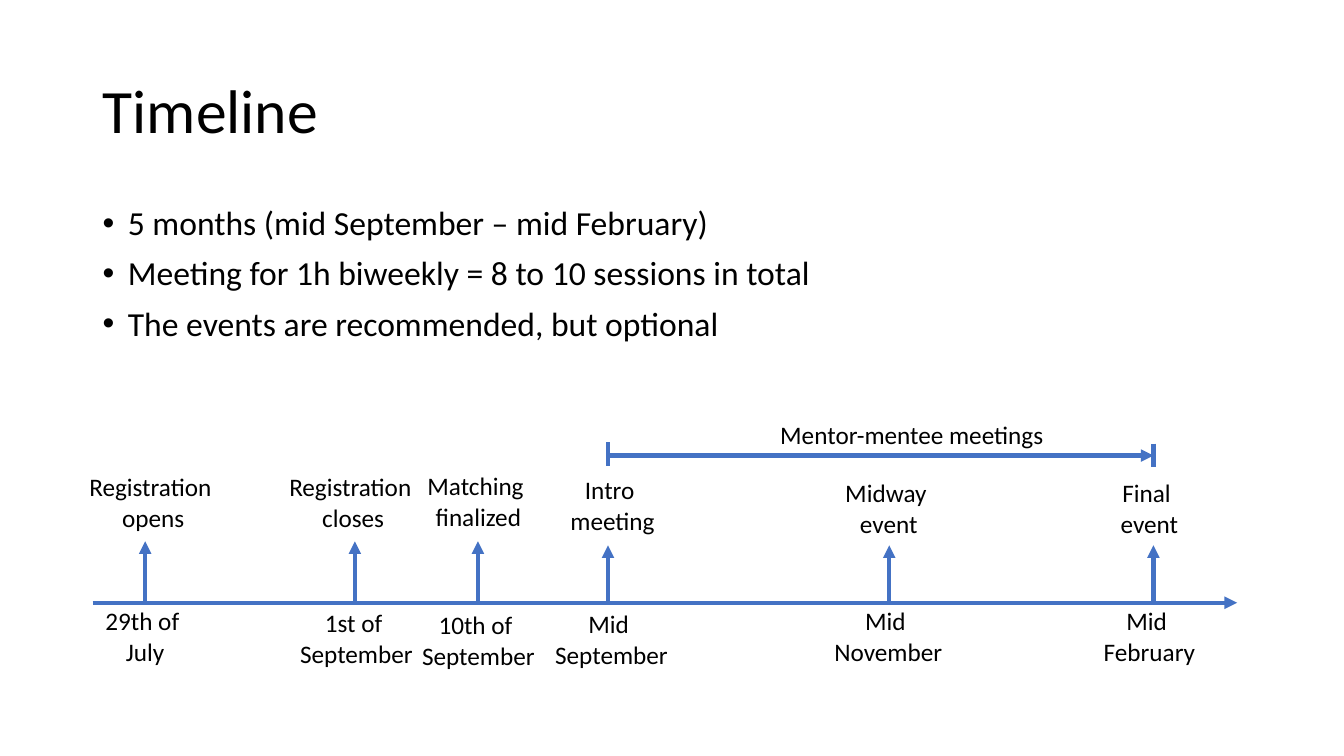
from dataclasses import dataclass

import pptx
import pptx.dml.color
import pptx.enum.shapes
import pptx.enum.text
import pptx.oxml.ns
import pptx.util
from lxml import etree

PX = 9144


@dataclass(frozen=True)
class Theme:
    font: str = "Calibri"
    ink: str = "000000"
    accent: str = "4472C4"
    title: int = 44
    body: int = 24
    label: int = 18
    stroke: int = 3


THEME = Theme()
ALIGN = pptx.enum.text.PP_ALIGN
ANCHOR = pptx.enum.text.MSO_ANCHOR
AUTO_SIZE = pptx.enum.text.MSO_AUTO_SIZE

AXIS_Y = 598
SPAN_Y = 452
LABEL_HEIGHT = 71
CAP_HEIGHT = 23

BULLETS = [
    "5 months (mid September – mid February)",
    "Meeting for 1h biweekly = 8 to 10 sessions in total",
    "The events are recommended, but optional",
]

MILESTONES = [
    (144, 537, ["Registration ", "opens"], (78, 463, 148), ["29th of ", "July"], (93, 596, 102)),
    (352, 537, ["Registration", " closes"], (276, 463, 143), ["1st of ", "September"], (287, 598, 133)),
    (474, 537, ["Matching ", "finalized"], (413, 462, 123), ["10th of ", "September"], (408, 600, 133)),
    (603, 541, ["Intro ", "meeting"], (555, 466, 105), ["Mid ", "September"], (540, 599, 133)),
    (882, 541, ["Midway ", "event"], (828, 469, 107), ["Mid ", "November"], (817, 596, 128)),
    (1144, 541, ["Final ", "event"], (1101, 469, 78), ["Mid ", "February"], (1084, 596, 112)),
]


def px(length):
    return pptx.util.Emu(length * PX)


def color(value):
    return pptx.dml.color.RGBColor.from_string(value)


def apply(target, values):
    for name, value in values.items():
        setattr(target, name, value)


def place(shape, left, top, width, height):
    apply(shape, {"left": px(left), "top": px(top), "width": px(width), "height": px(height)})


def write(frame, lines, size, frame_format, paragraph_format):
    apply(frame, frame_format)
    for index, line in enumerate(lines):
        paragraph = frame.add_paragraph() if index else frame.paragraphs[0]
        apply(paragraph, paragraph_format)
        run = paragraph.add_run()
        run.text = line
        apply(run.font, {"name": THEME.font, "size": pptx.util.Pt(size)})
        run.font.color.rgb = color(THEME.ink)


def add_title(slide, text):
    title = slide.shapes.title
    place(title, 92, 40, 1150, 145)
    write(title.text_frame, [text], THEME.title,
          {"word_wrap": True, "vertical_anchor": ANCHOR.MIDDLE, "auto_size": AUTO_SIZE.NONE},
          {"alignment": ALIGN.LEFT, "line_spacing": 0.9})


def add_bullets(slide, lines):
    summary = slide.shapes.add_textbox(px(92), px(200), px(1150), px(170))
    write(summary.text_frame, lines, THEME.body,
          {"word_wrap": True, "vertical_anchor": ANCHOR.TOP},
          {"line_spacing": 0.9, "space_before": pptx.util.Pt(10)})
    for paragraph in summary.text_frame.paragraphs:
        properties = paragraph._p.get_or_add_pPr()
        properties.set("marL", str(px(25)))
        properties.set("indent", str(px(-25)))
        font = etree.SubElement(properties, pptx.oxml.ns.qn("a:buFont"))
        font.set("typeface", "Arial")
        bullet = etree.SubElement(properties, pptx.oxml.ns.qn("a:buChar"))
        bullet.set("char", "•")


def add_label(slide, lines, left, top, width, height=LABEL_HEIGHT, alignment=ALIGN.CENTER):
    label = slide.shapes.add_textbox(px(left), px(top), px(width), px(height))
    write(label.text_frame, lines, THEME.label,
          {"word_wrap": False, "auto_size": AUTO_SIZE.SHAPE_TO_FIT_TEXT},
          {"alignment": alignment})


def add_line(slide, start, end, arrow=True):
    line = slide.shapes.add_connector(
        pptx.enum.shapes.MSO_CONNECTOR.STRAIGHT, *map(px, start + end))
    line.line.color.rgb = color(THEME.accent)
    line.line.width = pptx.util.Pt(THEME.stroke)
    if arrow:
        head = etree.SubElement(line.line._get_or_add_ln(), pptx.oxml.ns.qn("a:tailEnd"))
        head.set("type", "triangle")
    etree.SubElement(line._element.spPr, pptx.oxml.ns.qn("a:effectLst"))


def add_milestone(slide, x, tip, event, event_box, date, date_box):
    add_line(slide, (x, AXIS_Y), (x, tip))
    add_label(slide, event, *event_box)
    add_label(slide, date, *date_box)


def add_meeting_span(slide, first, last):
    add_line(slide, (first, SPAN_Y), (last, SPAN_Y))
    for x, top in ((first, 439), (last, 440)):
        add_line(slide, (x, top), (x, top + CAP_HEIGHT), arrow=False)
    add_label(slide, ["Mentor-mentee meetings"], 764, 411, 293, 40, ALIGN.LEFT)


def main():
    deck = pptx.Presentation()
    apply(deck, {"slide_width": px(1333), "slide_height": px(750)})
    slide = deck.slides.add_slide(deck.slide_layouts.get_by_name("Title Only"))
    add_title(slide, "Timeline")
    add_bullets(slide, BULLETS)
    add_line(slide, (92, AXIS_Y), (1227, AXIS_Y))
    for milestone in MILESTONES:
        add_milestone(slide, *milestone)
    add_meeting_span(slide, MILESTONES[3][0], MILESTONES[-1][0])
    deck.save("out.pptx")


if __name__ == "__main__":
    main()
